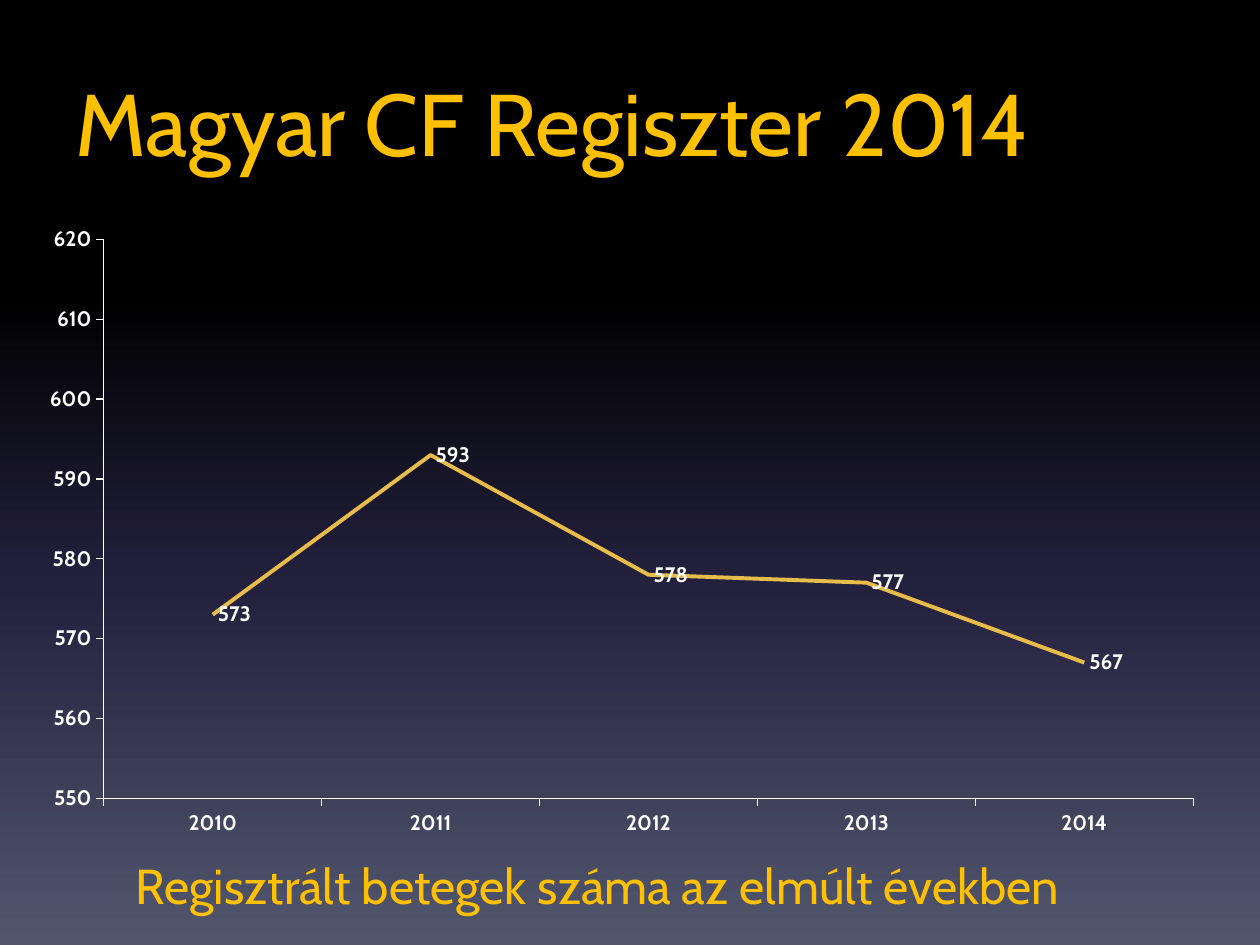
from dataclasses import dataclass

from lxml import etree
from pptx import Presentation
from pptx.chart.data import CategoryChartData
from pptx.dml.color import RGBColor
from pptx.enum.chart import XL_CHART_TYPE as ChartType
from pptx.enum.chart import XL_LABEL_POSITION as LabelPosition
from pptx.enum.chart import XL_MARKER_STYLE as MarkerStyle
from pptx.enum.chart import XL_TICK_MARK as TickMark
from pptx.enum.text import MSO_ANCHOR as Anchor
from pptx.oxml.ns import qn
from pptx.util import Pt

FONT = "Cabin"
GOLD, WHITE, LINE_GOLD = "FFC000", "FFFFFF", "E8BC4A"
BACKGROUND = ((0, "000000"), (31, "000000"), (62, "24213E"), (100, "51566D"))
PATIENTS = {"2010": 573, "2011": 593, "2012": 578, "2013": 577, "2014": 567}
PLOT_AREA = {"x": 0.065, "y": 0.04, "w": 0.915, "h": 0.88}


@dataclass(frozen=True)
class Caption:
    text: str
    left: float
    top: float
    width: float
    height: float
    size: float
    wrap: bool


CAPTIONS = (
    Caption("Magyar CF Regiszter 2014", 36, 36, 648, 90, 50, True),
    Caption("Regisztrált betegek száma az elmúlt években",
            70.6, 485.3, 584.6, 41, 28, False),
)


def color(value: str) -> RGBColor:
    return RGBColor.from_string(value)


def style_font(font, size: float, value: str, bold: bool = False) -> None:
    font.name = FONT
    font.size = Pt(size)
    font.bold = bold
    font.color.rgb = color(value)


def paint_background(page) -> None:
    """Fill the page with a top-to-bottom gradient of four stops."""
    fill = page.background.fill
    fill.gradient()
    fill.gradient_angle = 270
    stops = page.element.find(".//" + qn("a:gsLst"))
    for stop in list(stops):
        stops.remove(stop)
    for percent, value in BACKGROUND:
        stop = etree.SubElement(stops, qn("a:gs"), pos=str(percent * 1000))
        etree.SubElement(stop, qn("a:srgbClr"), val=value)


def add_caption(page, caption: Caption) -> None:
    box = page.shapes.add_textbox(Pt(caption.left), Pt(caption.top),
                                  Pt(caption.width), Pt(caption.height))
    frame = box.text_frame
    frame.text = caption.text
    frame.word_wrap = caption.wrap
    frame.vertical_anchor = Anchor.TOP
    for span in frame.paragraphs[0].runs:
        style_font(span.font, caption.size, GOLD)


def style_axis(axis) -> None:
    axis.has_major_gridlines = False
    axis.major_tick_mark = TickMark.OUTSIDE
    axis.minor_tick_mark = TickMark.NONE
    axis.format.line.color.rgb = color(WHITE)
    axis.format.line.width = Pt(0.75)
    style_font(axis.tick_labels.font, 12, WHITE, bold=True)


def place_plot(chart) -> None:
    """Fix the inner plot area as fractions of the chart frame."""
    plot_area = chart.element.find(".//" + qn("c:plotArea"))
    layout = plot_area.find(qn("c:layout"))
    if layout is None:
        layout = etree.Element(qn("c:layout"))
        plot_area.insert(0, layout)
    manual = etree.SubElement(layout, qn("c:manualLayout"))
    etree.SubElement(manual, qn("c:layoutTarget"), val="inner")
    for side in ("x", "y"):
        etree.SubElement(manual, qn(f"c:{side}Mode"), val="edge")
    for side, share in PLOT_AREA.items():
        etree.SubElement(manual, qn(f"c:{side}"), val=str(share))


def add_patient_chart(page) -> None:
    data = CategoryChartData()
    data.categories = PATIENTS.keys()
    data.add_series("Series 1", PATIENTS.values())
    chart = page.shapes.add_chart(ChartType.LINE, Pt(15.1), Pt(122.4),
                                  Pt(680.4), Pt(362.9), data).chart
    chart.has_title = False
    chart.has_legend = False
    style_font(chart.font, 10, WHITE)
    place_plot(chart)

    style_axis(chart.category_axis)
    style_axis(chart.value_axis)
    chart.value_axis.minimum_scale = 550
    chart.value_axis.maximum_scale = 620
    chart.value_axis.major_unit = 10

    plot = chart.plots[0]
    plot.vary_by_categories = False
    series = plot.series[0]
    series.smooth = False
    series.marker.style = MarkerStyle.NONE
    series.format.line.color.rgb = color(LINE_GOLD)
    series.format.line.width = Pt(2.25)
    labels = series.data_labels
    labels.show_value = True
    labels.position = LabelPosition.RIGHT
    style_font(labels.font, 12, WHITE, bold=True)


def main() -> None:
    deck = Presentation()
    deck.slide_width, deck.slide_height = Pt(720), Pt(540)
    page = deck.slides.add_slide(deck.slide_layouts[6])
    paint_background(page)
    for caption in CAPTIONS:
        add_caption(page, caption)
    add_patient_chart(page)
    deck.save("out.pptx")


if __name__ == "__main__":
    main()
